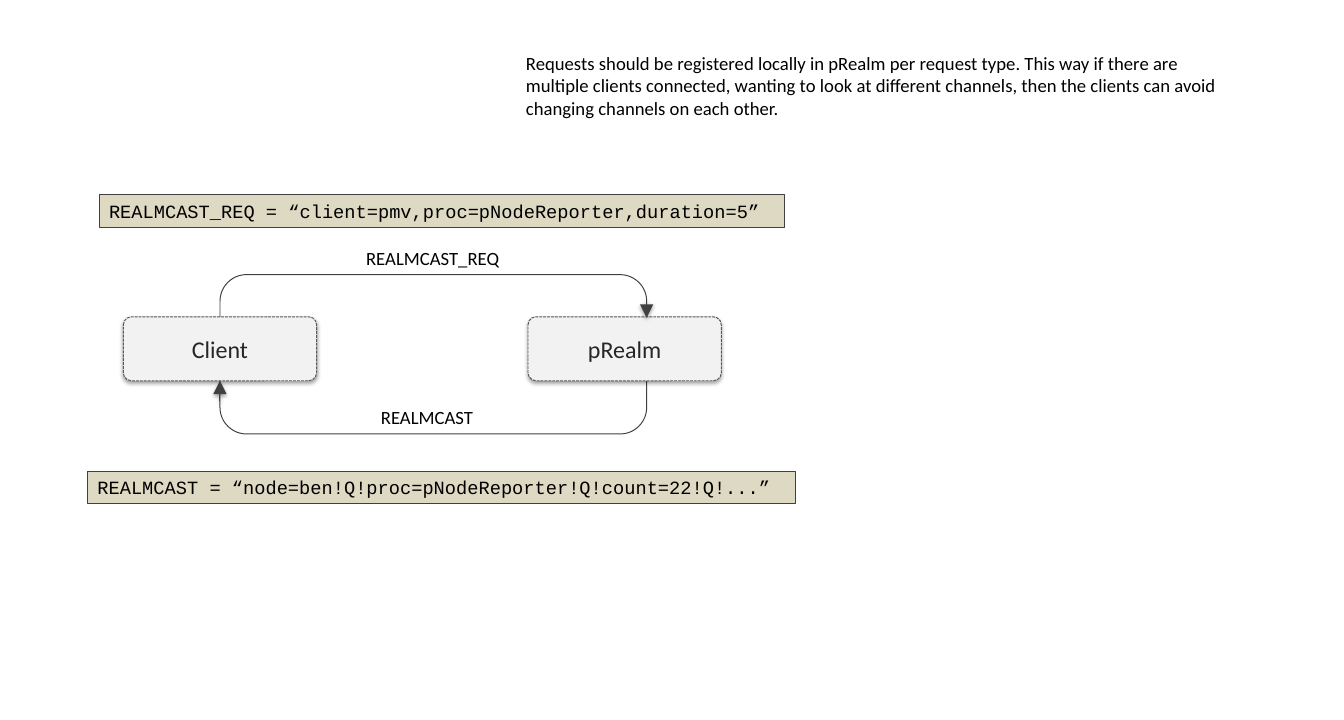
from lxml.etree import SubElement as Sub
from pptx import Presentation
from pptx.dml.color import RGBColor as RGB
from pptx.enum.dml import MSO_LINE as Dash
from pptx.enum.shapes import MSO_CONNECTOR as Link, MSO_SHAPE as Form
from pptx.enum.text import MSO_ANCHOR as Anchor, MSO_AUTO_SIZE as Auto, PP_ALIGN as Align
from pptx.oxml.ns import qn
from pptx.util import Pt

COLORS = {
    "black": "000000",
    "ink": "262626",
    "line": "404040",
    "edge": "595959",
    "node": "F2F2F2",
    "code": "DDD9C3",
}
NODE_W, NODE_H, NODE_TOP = 145, 48, 237.6
LOOP_LEFT, LOOP_TOP, LOOP_W, LOOP_H = 165, 206, 320, 119.5
BAR_H = 24.5


def color(name):
    return RGB.from_string(COLORS[name])


def write(shape, text, size=14, font="Calibri", ink="black",
          align=Align.LEFT, anchor=Anchor.TOP, wrap=True, grow=True):
    frame = shape.text_frame
    frame.word_wrap = wrap
    frame.auto_size = Auto.SHAPE_TO_FIT_TEXT if grow else Auto.NONE
    frame.vertical_anchor = anchor
    para = frame.paragraphs[0]
    para.alignment = align
    run = para.add_run()
    run.text = text
    run.font.name = font
    run.font.size = Pt(size)
    run.font.color.rgb = color(ink)


def add_shade(shape, alpha, dist):
    props = shape._element.spPr
    for old in props.findall(qn("a:effectLst")):
        props.remove(old)
    shade = Sub(Sub(props, qn("a:effectLst")), qn("a:outerShdw"),
                blurRad=str(Pt(3.1)), dist=str(Pt(dist)),
                dir="5400000", rotWithShape="0")
    tint = Sub(shade, qn("a:srgbClr"), val=COLORS["black"])
    Sub(tint, qn("a:alpha"), val=str(alpha * 1000))


def add_form(slide, form, left, top, width, height, fill=None, line="line"):
    shape = slide.shapes.add_shape(form, Pt(left), Pt(top), Pt(width), Pt(height))
    shape.shadow.inherit = False
    if fill:
        shape.fill.solid()
        shape.fill.fore_color.rgb = color(fill)
    else:
        shape.fill.background()
    shape.line.color.rgb = color(line)
    shape.line.width = Pt(0.75)
    return shape


def add_node(slide, text, left):
    node = add_form(slide, Form.ROUNDED_RECTANGLE, left, NODE_TOP,
                    NODE_W, NODE_H, "node", "edge")
    node.adjustments[0] = 0.126
    node.line.dash_style = Dash.SQUARE_DOT
    add_shade(node, 35, 1.8)
    write(node, text, size=18, ink="ink", align=Align.CENTER,
          anchor=Anchor.MIDDLE, grow=False)
    return node


def add_arrow(slide, x, start, end):
    arrow = slide.shapes.add_connector(Link.STRAIGHT, Pt(x), Pt(start), Pt(x), Pt(end))
    arrow.line.color.rgb = color("line")
    arrow.line.width = Pt(0.75)
    Sub(arrow.line._get_or_add_ln(), qn("a:tailEnd"), type="triangle", w="lg", len="lg")
    add_shade(arrow, 38, 1.6)
    return arrow


def add_label(slide, text, left, top, width, height=BAR_H, wrap=False):
    box = slide.shapes.add_textbox(Pt(left), Pt(top), Pt(width), Pt(height))
    write(box, text, wrap=wrap)


def add_bar(slide, text, left, top, width):
    bar = add_form(slide, Form.RECTANGLE, left, top, width, BAR_H, "code")
    write(bar, text, font="Courier New", wrap=False)


def main():
    deck = Presentation()
    deck.slide_width, deck.slide_height = Pt(1008), Pt(540)
    slide = deck.slides.add_slide(deck.slide_layouts[6])

    add_form(slide, Form.ROUNDED_RECTANGLE, LOOP_LEFT, LOOP_TOP, LOOP_W, LOOP_H)
    add_node(slide, "pRealm", 396)
    client = add_node(slide, "Client", LOOP_LEFT - NODE_W / 2)
    add_arrow(slide, LOOP_LEFT + LOOP_W, 224.6, 238.3)
    back = add_arrow(slide, LOOP_LEFT, 301, NODE_TOP + NODE_H)
    back.end_connect(client, 2)

    add_label(slide, "REALMCAST_REQ", 267.5, 181.5, 115)
    add_label(slide, "REALMCAST", 278.6, 301, 84)
    add_label(slide, "Requests should be registered locally in pRealm per request type. "
              "This way if there are multiple clients connected, wanting to look at "
              "different channels, then the clients can avoid changing channels on "
              "each other.", 387.4, 35.3, 537, 58.3, wrap=True)
    add_bar(slide, "REALMCAST_REQ = “client=pmv,proc=pNodeReporter,duration=5”",
            74.7, 146, 513.5)
    add_bar(slide, "REALMCAST = “node=ben!Q!proc=pNodeReporter!Q!count=22!Q!...”",
            66, 353.5, 531)
    deck.save("out.pptx")


if __name__ == "__main__":
    main()
